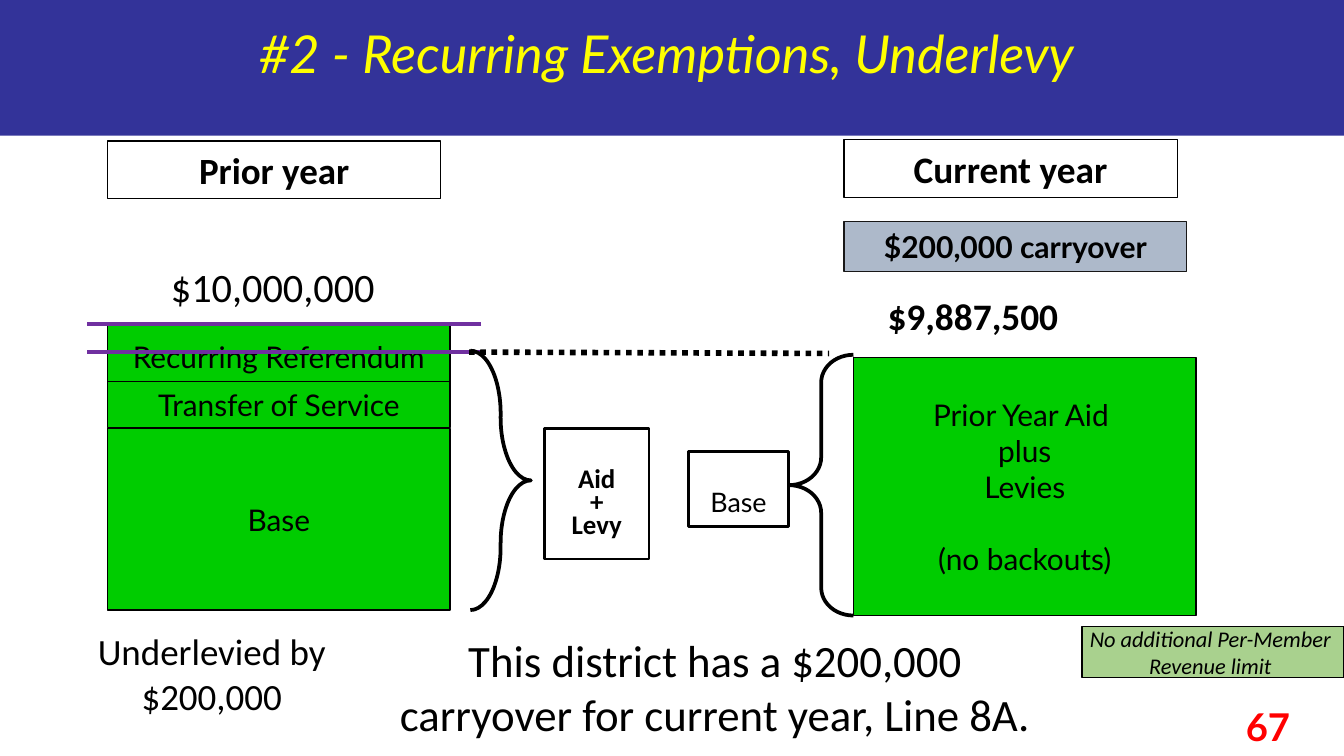
from lxml.etree import SubElement
from pptx import Presentation
from pptx.dml.color import RGBColor
from pptx.enum.dml import MSO_LINE
from pptx.enum.shapes import MSO_CONNECTOR, MSO_SHAPE
from pptx.enum.text import MSO_ANCHOR, PP_ALIGN
from pptx.oxml.ns import qn
from pptx.util import Inches, Pt

COLORS = {
    "band": "333399",
    "title": "FFFF00",
    "black": "000000",
    "number": "FF0000",
    "levy": "00CC00",
    "carryover": "ADB9CA",
    "carryover line": "181717",
    "note": "A9D18E",
    "limit": "7030A0",
}


def color(name):
    return RGBColor.from_string(COLORS[name])


def write(shape, lines, size, font="Calibri", ink="black", bold=False, italic=False,
          anchor=MSO_ANCHOR.TOP, wrap=True, top=0.05, spacing=None):
    """Write centred lines, one paragraph each."""
    frame = shape.text_frame
    frame.word_wrap = wrap
    frame.vertical_anchor = anchor
    frame.margin_top = Inches(top)
    for index, line in enumerate(lines):
        paragraph = frame.paragraphs[0] if index == 0 else frame.add_paragraph()
        paragraph.alignment = PP_ALIGN.CENTER
        if spacing:
            paragraph.line_spacing = Pt(spacing)
        run = paragraph.add_run()
        run.text = line
        run.font.name = font
        run.font.size = Pt(size)
        run.font.bold = bold
        run.font.italic = italic
        run.font.color.rgb = color(ink)


def add_label(slide, box, lines, size, **style):
    shape = slide.shapes.add_textbox(*map(Inches, box))
    write(shape, lines, size, **style)


def add_box(slide, box, fill=None, line="black", width=0.75, kind=MSO_SHAPE.RECTANGLE):
    shape = slide.shapes.add_shape(kind, *map(Inches, box))
    shape.shadow.inherit = False
    if fill:
        shape.fill.solid()
        shape.fill.fore_color.rgb = color(fill)
    else:
        shape.fill.background()
    if line:
        shape.line.color.rgb = color(line)
        shape.line.width = Pt(width)
    else:
        shape.line.fill.background()
    return shape


def add_brace(slide, kind, box, curve):
    brace = add_box(slide, box, width=2, kind=kind)
    brace.adjustments[0] = curve
    brace.adjustments[1] = 0.5


def add_line(slide, start, end, ink, width, dash=None):
    line = slide.shapes.add_connector(MSO_CONNECTOR.STRAIGHT, *map(Inches, start + end))
    line.line.color.rgb = color(ink)
    line.line.width = Pt(width)
    if dash:
        line.line.dash_style = dash
    SubElement(line._element.spPr, qn("a:effectLst"))


def add_header(slide):
    add_box(slide, (-0.01, 0, 10.01, 1.01), fill="band", line=None)
    add_label(slide, (0, 0.09, 10, 0.6), ["#2 - Recurring Exemptions, Underlevy "], 28,
              font="Lato", ink="title", italic=True, anchor=MSO_ANCHOR.MIDDLE)
    add_label(slide, (8.87, 5.18, 1.13, 0.45), ["67"], 20.5,
              font="Lato", ink="number", bold=True)


def add_prior_year(slide):
    write(add_box(slide, (0.8, 1.05, 2.48, 0.43)), ["Prior year"], 19.8, bold=True)
    add_label(slide, (0.72, 1.9, 2.62, 0.46), ["$10,000,000"], 21.6)

    # Stacked levy parts
    parts = [("Recurring Referendum", 2.42, 0.46),
             ("Transfer of Service", 2.84, 0.34),
             ("Base", 3.19, 1.35)]
    for name, top, height in parts:
        part = add_box(slide, (0.8, top, 2.55, height), fill="levy")
        write(part, [name], 16, font="Lato", anchor=MSO_ANCHOR.MIDDLE, wrap=False)
    add_label(slide, (0.33, 4.63, 2.49, 0.77), ["Underlevied by $200,000"], 19.8)

    # Allowed and actual levy levels
    for level in (2.41, 2.62):
        add_line(slide, (3.58, level), (0.65, level), "limit", 2.25)
    add_brace(slide, MSO_SHAPE.RIGHT_BRACE, (3.5, 2.61, 0.45, 1.93), 1.04)
    write(add_box(slide, (4.05, 3.19, 0.78, 0.97), width=1.5), ["Aid", "+", "Levy"], 14.4,
          bold=True, anchor=MSO_ANCHOR.MIDDLE, top=0.22, spacing=12.3)


def add_current_year(slide):
    write(add_box(slide, (6.28, 1.04, 2.48, 0.43)), ["Current year"], 20, bold=True)
    write(add_box(slide, (6.28, 1.65, 2.55, 0.37), fill="carryover", line="carryover line"),
          ["$200,000 carryover"], 16.1, font="Lato", bold=True)
    add_label(slide, (4.74, 2.13, 5, 0.44), ["$9,887,500"], 20, bold=True)

    # New base
    base = add_box(slide, (6.35, 2.66, 2.55, 1.92), fill="levy")
    write(base, ["Prior Year Aid ", "plus", "Levies", "(no backouts)"], 16, font="Lato",
          anchor=MSO_ANCHOR.MIDDLE, wrap=False)
    base.text_frame.paragraphs[-1].space_before = Pt(19.2)
    add_line(slide, (3.49, 2.62), (6.17, 2.63), "black", 3, MSO_LINE.ROUND_DOT)
    write(add_box(slide, (5.12, 3.36, 0.75, 0.56), width=1.5), ["Base"], 14.4,
          font="Lato", anchor=MSO_ANCHOR.MIDDLE, top=0.23)
    add_brace(slide, MSO_SHAPE.LEFT_BRACE, (5.87, 2.64, 0.48, 1.94), 0.43)


def add_conclusion(slide):
    write(add_box(slide, (8.05, 4.66, 1.95, 0.38), fill="note"),
          ["No additional Per-Member ", "Revenue limit "], 12, italic=True,
          anchor=MSO_ANCHOR.MIDDLE, wrap=False)
    add_label(slide, (2.82, 4.66, 5, 0.91),
              ["This district has a $200,000 carryover for current year, Line 8A."], 24)


def main():
    presentation = Presentation()
    # Widescreen, 16:9
    presentation.slide_width = Inches(10)
    presentation.slide_height = Inches(10) * 9 // 16
    slide = presentation.slides.add_slide(presentation.slide_layouts[6])
    add_header(slide)
    add_prior_year(slide)
    add_current_year(slide)
    add_conclusion(slide)
    presentation.save("out.pptx")


if __name__ == "__main__":
    main()
